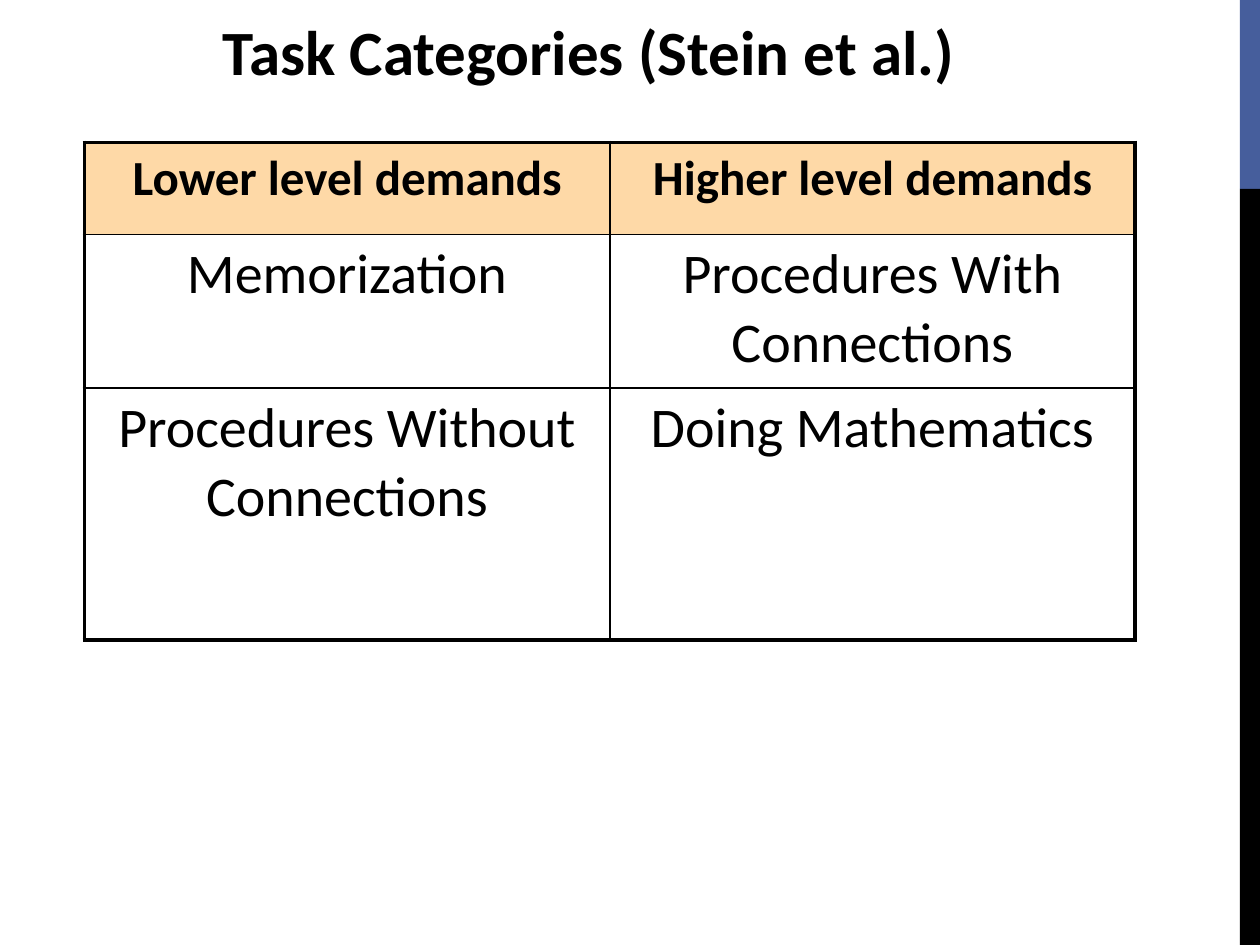
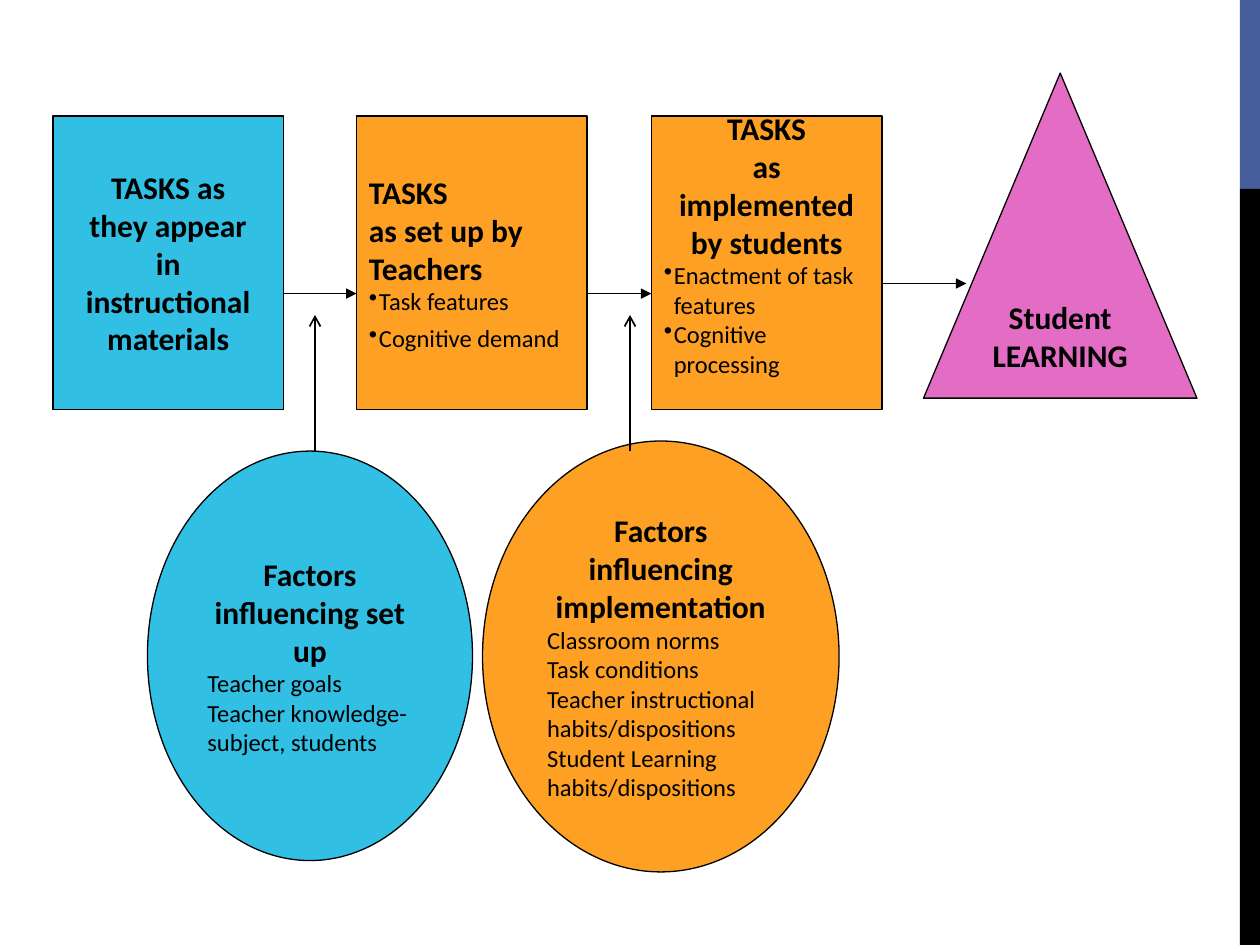
"""Build two slides on task categories and how tasks lead to student learning."""
from dataclasses import dataclass
from typing import Any

from lxml.etree import SubElement
from pptx import Presentation
from pptx.dml.color import RGBColor
from pptx.enum.shapes import MSO_CONNECTOR, MSO_SHAPE
from pptx.enum.text import MSO_ANCHOR, PP_ALIGN
from pptx.oxml.ns import qn
from pptx.util import Inches, Pt

BLACK = RGBColor(0x00, 0x00, 0x00)
BAND_BLUE = RGBColor(0x46, 0x5E, 0x9C)
HEADER_PEACH = RGBColor(0xFE, 0xD9, 0xA7)
SKY = RGBColor(0x31, 0xBF, 0xE3)
ORANGE = RGBColor(0xFD, 0xA0, 0x23)
PINK = RGBColor(0xE3, 0x6C, 0xC5)

FONT = "Calibri"
TITLE = {"name": FONT, "size": Pt(36), "bold": True}
TABLE_HEADER = {"name": FONT, "size": Pt(28), "bold": True}
TABLE_BODY = {"name": FONT, "size": Pt(32), "bold": False}
HEADING = {"name": FONT, "size": Pt(18), "bold": True}
DETAIL = {"name": FONT, "size": Pt(14), "bold": False}

BAND_LEFT, BAND_WIDTH = 9.84, 0.16
BANDS = ((0, 1.5, BAND_BLUE), (1.5, 6, BLACK))
OUTER, INNER = Pt(2.25), Pt(1)
CATEGORIES = (
    ("Lower level demands", "Higher level demands"),
    ("Memorization", "Procedures With Connections"),
    ("Procedures Without Connections", "Doing Mathematics"),
)
ROW_HEIGHTS = (0.73, 1.22, 2)
COLUMN_WIDTH = 4.17
BULLET_HANG = Inches(0.08)


@dataclass(frozen=True)
class Stage:
    """A filled shape with bold heading lines and smaller details."""

    kind: MSO_SHAPE
    box: tuple[float, float, float, float]
    color: RGBColor
    headings: tuple[str, ...]
    details: tuple[str, ...] = ()
    align: PP_ALIGN = PP_ALIGN.CENTER
    bulleted: bool = False
    detail_gap: float = 0
    top_inset: float = 0.05
    bottom_inset: float = 0.05
    wrap: bool = True


@dataclass(frozen=True)
class Arrow:
    """A straight arrow between two points."""

    start: tuple[float, float]
    end: tuple[float, float]
    width: float = 0.75
    head: str = "triangle"


STAGES = (
    Stage(MSO_SHAPE.RECTANGLE, (0.42, 0.92, 1.83, 2.33), SKY,
          ("TASKS as", "they appear", "in", "instructional", "materials")),
    Stage(MSO_SHAPE.ISOSCELES_TRIANGLE, (7.33, 0.58, 2.17, 2.58), PINK,
          ("Student", "LEARNING"), top_inset=0.35, wrap=False),
    Stage(MSO_SHAPE.RECTANGLE, (2.83, 0.92, 1.83, 2.33), ORANGE,
          ("TASKS", "as set up by", "Teachers"),
          ("Task features", "Cognitive demand"),
          align=PP_ALIGN.LEFT, bulleted=True, detail_gap=4),
    Stage(MSO_SHAPE.RECTANGLE, (5.17, 0.92, 1.83, 2.33), ORANGE,
          ("TASKS", "as", "implemented", "by students"),
          ("Enactment of task\vfeatures", "Cognitive\vprocessing"),
          bulleted=True, bottom_inset=0.35),
    Stage(MSO_SHAPE.OVAL, (1.17, 3.58, 2.58, 3.25), SKY,
          ("Factors influencing set up",),
          ("Teacher goals", "Teacher knowledge-subject, students")),
    Stage(MSO_SHAPE.OVAL, (3.83, 3.5, 2.83, 3.42), ORANGE,
          ("Factors influencing implementation",),
          ("Classroom norms", "Task conditions",
           "Teacher instructional habits/dispositions",
           "Student Learning habits/dispositions")),
)
ARROWS = (
    Arrow((2.25, 2.33), (2.83, 2.33)),
    Arrow((4.67, 2.33), (5.17, 2.33)),
    Arrow((7, 2.25), (7.67, 2.25)),
    Arrow((2.5, 3.58), (2.5, 2.5), 1, "arrow"),
    Arrow((5, 3.58), (5, 2.5), 1, "arrow"),
)


def write(paragraph: Any, text: str, style: dict[str, Any], align: PP_ALIGN) -> None:
    """Fill a paragraph with black text in the given style."""
    paragraph.text = text
    paragraph.alignment = align
    for run in paragraph.runs:
        for name, value in style.items():
            setattr(run.font, name, value)
        run.font.color.rgb = BLACK
    for line_break in paragraph._p.findall(qn("a:br")):
        SubElement(line_break, qn("a:rPr"), sz=str(int(style["size"].pt * 100)))


def add_bullet(paragraph: Any) -> None:
    """Give a paragraph a bullet with a hanging indent."""
    properties = paragraph._p.get_or_add_pPr()
    properties.set("marL", str(BULLET_HANG))
    properties.set("indent", str(-BULLET_HANG))
    SubElement(properties, qn("a:buChar"), char="•")


def add_filled(slide: Any, kind: MSO_SHAPE, box: tuple[float, ...], color: RGBColor) -> Any:
    """Add a flat shape without an outline."""
    shape = slide.shapes.add_shape(kind, *map(Inches, box))
    shape.shadow.inherit = False
    shape.fill.solid()
    shape.fill.fore_color.rgb = color
    shape.line.fill.background()
    return shape


def add_base_slide(deck: Any) -> Any:
    """Add a blank slide with the side bands."""
    slide = deck.slides.add_slide(deck.slide_layouts[6])
    for top, height, color in BANDS:
        add_filled(slide, MSO_SHAPE.RECTANGLE, (BAND_LEFT, top, BAND_WIDTH, height), color)
    return slide


def add_title(slide: Any, text: str) -> None:
    """Add the slide title."""
    title = slide.shapes.add_textbox(*map(Inches, (1.67, 0.05, 7.5, 0.71)))
    title.text_frame.word_wrap = True
    write(title.text_frame.paragraphs[0], text, TITLE, PP_ALIGN.LEFT)


def set_borders(cell: Any, widths: dict[str, int]) -> None:
    """Draw black cell borders of the given widths."""
    properties = cell._tc.get_or_add_tcPr()
    for side, width in widths.items():
        border = SubElement(properties, qn(f"a:ln{side}"), w=str(width))
        fill = SubElement(border, qn("a:solidFill"))
        SubElement(fill, qn("a:srgbClr"), val=str(BLACK))


def add_category_table(slide: Any) -> None:
    """Add the table of lower and higher level demands."""
    rows, columns = len(CATEGORIES), len(CATEGORIES[0])
    table = slide.shapes.add_table(
        rows, columns, Inches(0.67), Inches(1.13),
        Inches(COLUMN_WIDTH * columns), Inches(sum(ROW_HEIGHTS))).table
    table.first_row = table.horz_banding = False
    for column in table.columns:
        column.width = Inches(COLUMN_WIDTH)
    for r, (height, labels) in enumerate(zip(ROW_HEIGHTS, CATEGORIES)):
        table.rows[r].height = Inches(height)
        style = TABLE_BODY if r else TABLE_HEADER
        for c, label in enumerate(labels):
            cell = table.cell(r, c)
            set_borders(cell, {
                "L": INNER if c else OUTER,
                "R": OUTER if c == columns - 1 else INNER,
                "T": INNER if r else OUTER,
                "B": OUTER if r == rows - 1 else INNER,
            })
            if r:
                cell.fill.background()
            else:
                cell.fill.solid()
                cell.fill.fore_color.rgb = HEADER_PEACH
            paragraph = cell.text_frame.paragraphs[0]
            write(paragraph, label, style, PP_ALIGN.CENTER)
            paragraph.space_before = Pt(style["size"].pt * 0.2)


def add_stage(slide: Any, stage: Stage) -> None:
    """Draw a stage with its headings and details."""
    shape = add_filled(slide, stage.kind, stage.box, stage.color)
    shape.line.color.rgb = BLACK
    shape.line.width = Pt(0.75)
    frame = shape.text_frame
    layout = {
        "word_wrap": stage.wrap,
        "vertical_anchor": MSO_ANCHOR.MIDDLE,
        "margin_top": Inches(stage.top_inset),
        "margin_bottom": Inches(stage.bottom_inset),
    }
    for name, value in layout.items():
        setattr(frame, name, value)
    for i, heading in enumerate(stage.headings):
        paragraph = frame.add_paragraph() if i else frame.paragraphs[0]
        write(paragraph, heading, HEADING, stage.align)
    for i, detail in enumerate(stage.details):
        paragraph = frame.add_paragraph()
        write(paragraph, detail, DETAIL, PP_ALIGN.LEFT)
        if i and stage.detail_gap:
            paragraph.space_before = Pt(stage.detail_gap)
        if stage.bulleted:
            add_bullet(paragraph)


def add_arrow(slide: Any, arrow: Arrow) -> None:
    """Draw an arrow with a head at its end."""
    connector = slide.shapes.add_connector(
        MSO_CONNECTOR.STRAIGHT, *map(Inches, arrow.start + arrow.end))
    connector.line.color.rgb = BLACK
    connector.line.width = Pt(arrow.width)
    SubElement(connector.line._get_or_add_ln(), qn("a:tailEnd"), type=arrow.head)
    SubElement(connector._element.spPr, qn("a:effectLst"))


def main() -> None:
    """Build and save the presentation."""
    deck = Presentation()
    deck.slide_width, deck.slide_height = Inches(10), Inches(7.5)

    categories = add_base_slide(deck)
    add_category_table(categories)
    add_title(categories, "Task Categories (Stein et al.)")

    framework = add_base_slide(deck)
    for stage in STAGES:
        add_stage(framework, stage)
    for arrow in ARROWS:
        add_arrow(framework, arrow)

    deck.save("out.pptx")


if __name__ == "__main__":
    main()
